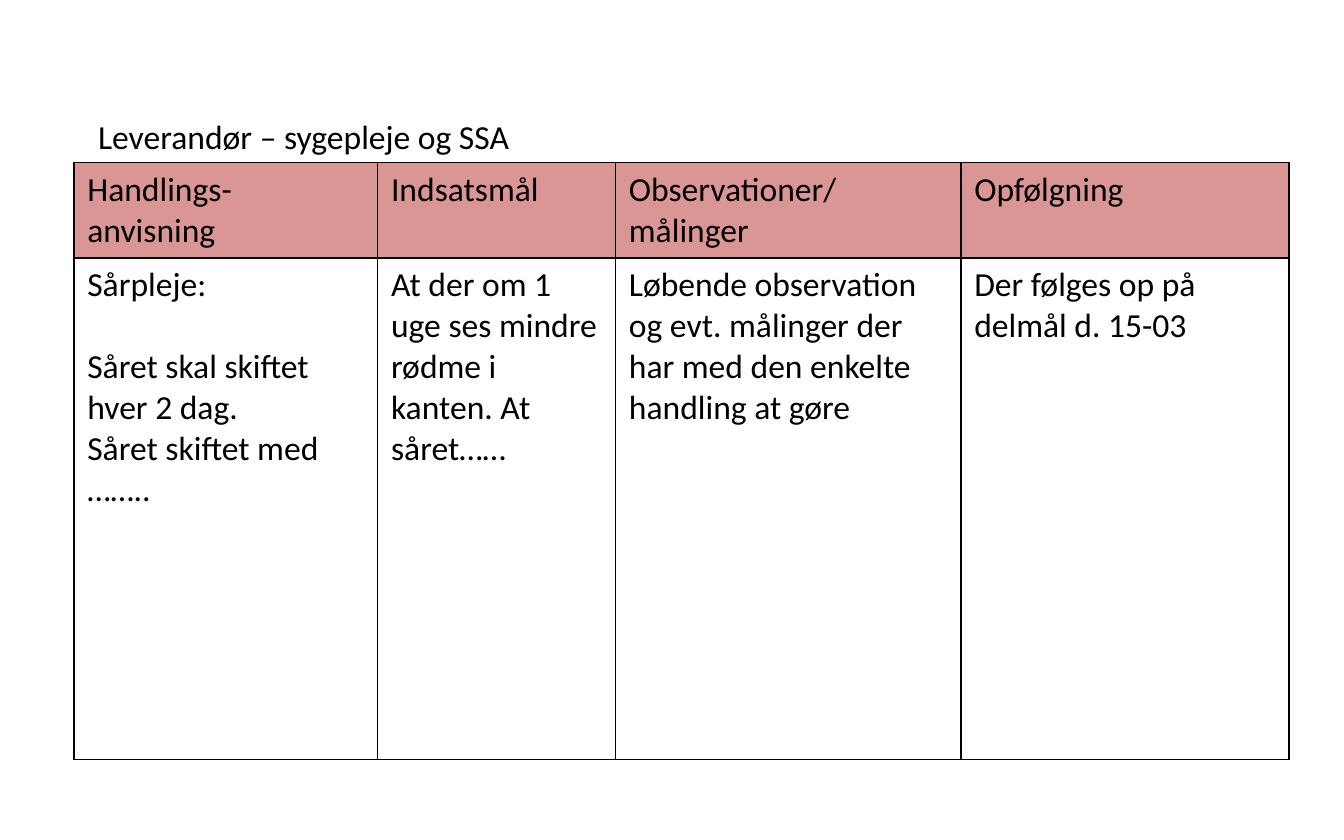
"""Build the care plan slide: a heading above a four-column table."""
from dataclasses import dataclass

from lxml.etree import SubElement
from pptx import Presentation
from pptx.dml.color import RGBColor
from pptx.enum.text import MSO_ANCHOR, MSO_AUTO_SIZE, PP_ALIGN
from pptx.oxml.ns import qn
from pptx.util import Emu, Pt

EMU_PER_PX = 9144
FONT = "Calibri"
FONT_PT = 18
BLANK_LINE_PT = 22
BLACK = "000000"
HEADER_PINK = "D99694"
ROW_HEIGHTS = (71, 373)


@dataclass(frozen=True)
class Line:
    text: str
    before_pt: int = 0


@dataclass(frozen=True)
class Column:
    width: int
    header: tuple[Line, ...]
    body: tuple[Line, ...]


COLUMNS = (
    Column(226, (Line("Handlings-"), Line("anvisning")),
           (Line("Sårpleje:"),
            Line("Såret skal skiftet hver 2 dag.", BLANK_LINE_PT),
            Line("Såret skiftet med …….."))),
    Column(177, (Line("Indsatsmål"),),
           (Line("At der om 1 uge ses mindre rødme i kanten. At såret……"),)),
    Column(257, (Line("Observationer/"), Line("målinger")),
           (Line("Løbende observation og evt. målinger der har med den "
                 "enkelte handling at gøre"),)),
    Column(244, (Line("Opfølgning"),),
           (Line("Der følges op på delmål d. 15-03"),)),
)


def px(length: int) -> Emu:
    """Turn px into EMU."""
    return Emu(length * EMU_PER_PX)


def color(value: str) -> RGBColor:
    """Turn a hex string into a colour."""
    return RGBColor.from_string(value)


def write_lines(frame, lines: tuple[Line, ...]) -> None:
    """Write one left-aligned paragraph per line."""
    for index, line in enumerate(lines):
        paragraph = frame.add_paragraph() if index else frame.paragraphs[0]
        paragraph.text = line.text
        paragraph.alignment = PP_ALIGN.LEFT
        paragraph.space_before = Pt(line.before_pt)
        paragraph.font.name = FONT
        paragraph.font.size = Pt(FONT_PT)
        paragraph.font.color.rgb = color(BLACK)


def add_borders(cell) -> None:
    """Draw a thin black line on every side of a cell."""
    properties = cell._tc.get_or_add_tcPr()
    for side in ("lnL", "lnR", "lnT", "lnB"):
        border = SubElement(properties, qn(f"a:{side}"), w=str(Pt(1)))
        fill = SubElement(border, qn("a:solidFill"))
        SubElement(fill, qn("a:srgbClr"), val=BLACK)


def fill_cell(cell, lines: tuple[Line, ...], background: str | None) -> None:
    """Set borders, background and text of a cell."""
    add_borders(cell)
    if background:
        cell.fill.solid()
        cell.fill.fore_color.rgb = color(background)
    else:
        cell.fill.background()
    write_lines(cell.text_frame, lines)


def set_heading(heading) -> None:
    """Place and write the heading above the table."""
    heading.left, heading.top = px(63), px(81)
    heading.width, heading.height = px(596), px(40)
    frame = heading.text_frame
    frame.word_wrap = True
    frame.auto_size = MSO_AUTO_SIZE.SHAPE_TO_FIT_TEXT
    frame.vertical_anchor = MSO_ANCHOR.TOP
    write_lines(frame, (Line("Leverandør – sygepleje og SSA"),))


def add_plan(slide) -> None:
    """Add the table of actions, goals, observations and follow-up."""
    width = sum(column.width for column in COLUMNS)
    plan = slide.shapes.add_table(
        len(ROW_HEIGHTS), len(COLUMNS), px(55), px(121),
        px(width), px(sum(ROW_HEIGHTS))).table
    plan.first_row = plan.horz_banding = False
    for row, height in zip(plan.rows, ROW_HEIGHTS):
        row.height = px(height)
    for index, column in enumerate(COLUMNS):
        plan.columns[index].width = px(column.width)
        fill_cell(plan.cell(0, index), column.header, HEADER_PINK)
        fill_cell(plan.cell(1, index), column.body, None)


def main() -> None:
    """Build and save the slide."""
    deck = Presentation()
    deck.slide_width, deck.slide_height = px(1000), px(625)
    slide = deck.slides.add_slide(deck.slide_layouts.get_by_name("Title Only"))
    set_heading(slide.shapes.title)
    add_plan(slide)
    deck.save("out.pptx")


if __name__ == "__main__":
    main()
